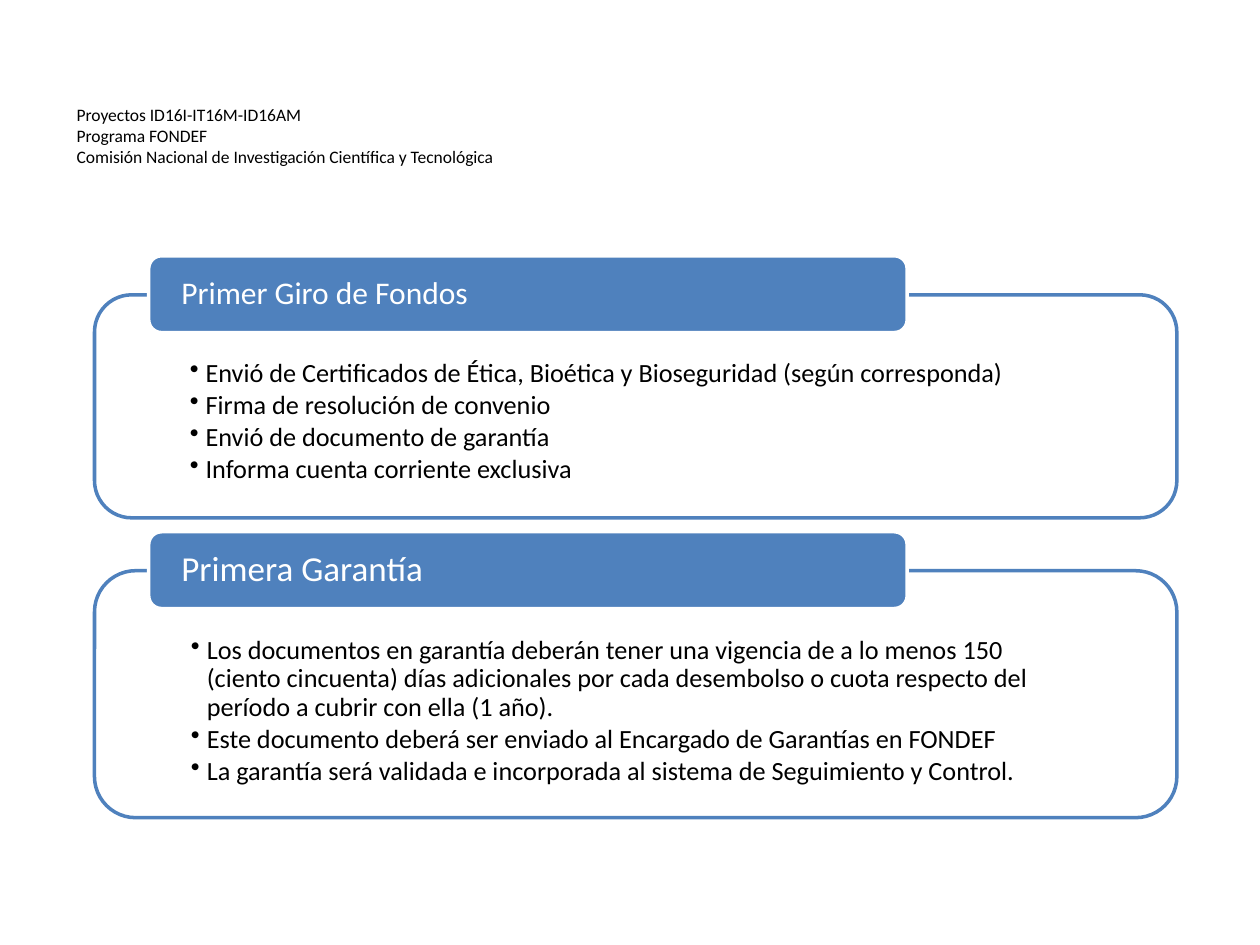
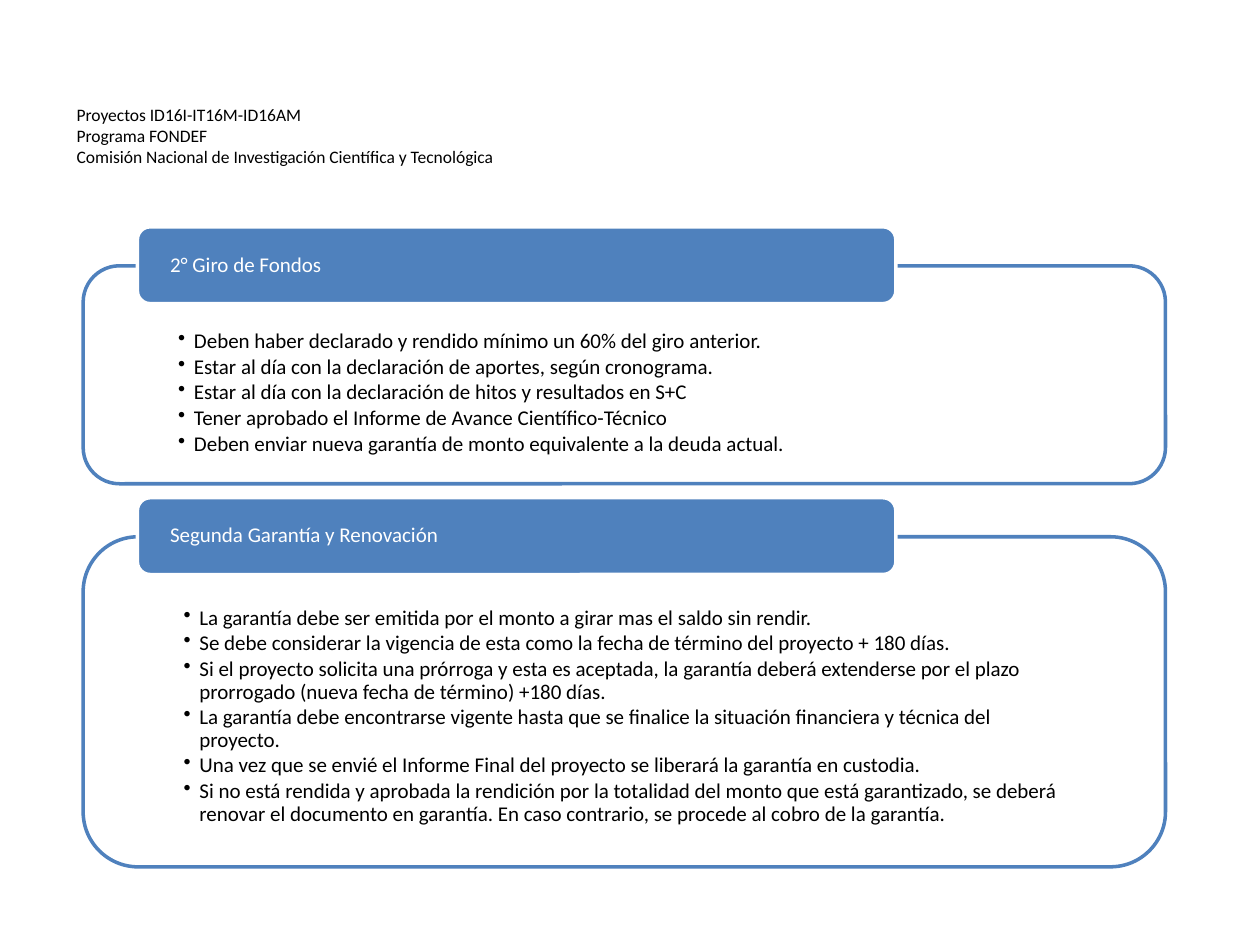
import pptx
import pptx.util
import pptx.dml.color
import pptx.enum.shapes
import pptx.enum.text
import pptx.oxml.ns
import lxml.etree

prs = pptx.Presentation()
prs.slide_width = pptx.util.Inches(10)
prs.slide_height = pptx.util.Inches(7.5)

# Shared look: a grid of 100 columns by 75 rows
U = prs.slide_width / 100
BLUE, WHITE, BLACK = "4F81BD", "FFFFFF", "000000"
FONT = "Calibri"
PANEL_W, TAB_W, TAB_H = 85.9, 60.2, 6.1
TAB_DX, TAB_RISE = 4.3, 3.1
HEADING = [
    "Proyectos ID16I-IT16M-ID16AM",
    "Programa FONDEF",
    "Comisión Nacional de Investigación Científica y Tecnológica",
]


def rgb(color):
    return pptx.dml.color.RGBColor.from_string(color)


def add_box(s, x, y, w, h, fill, line, margins):
    """Rounded rectangle placed on the grid, with margins left, top, right, bottom."""
    sp = s.shapes.add_shape(pptx.enum.shapes.MSO_SHAPE.ROUNDED_RECTANGLE,
                            *[round(v * U) for v in (x, y, w, h)])
    sp.shadow.inherit = False
    sp.fill.solid()
    sp.fill.fore_color.rgb = rgb(fill)
    sp.line.color.rgb = rgb(line)
    sp.line.width = pptx.util.Pt(2)
    tf = sp.text_frame
    tf.word_wrap = True
    tf.margin_left, tf.margin_top, tf.margin_right, tf.margin_bottom = [
        round(m * U) for m in margins]
    return sp


# Each slide: panel left edge, bottom margin, then panels of
# (top, height, tab title, title size, body size, bullets)
slides = [
    (7.5, 1.2, [
        (23.4, 17.7, "Primer Giro de Fondos", 18, 15, [
            "Envió de Certificados de Ética, Bioética y Bioseguridad (según corresponda)",
            "Firma de resolución de convenio",
            "Envió de documento de garantía",
            "Informa cuenta corriente exclusiva",
        ]),
        (45.3, 19.6, "Primera Garantía", 20, 15, [
            "Los documentos en garantía deberán tener una vigencia de a lo menos 150 "
            "(ciento cincuenta) días adicionales por cada desembolso o cuota respecto del "
            "período a cubrir con ella (1 año).",
            "Este documento deberá ser enviado al Encargado de Garantías en FONDEF",
            "La garantía será validada e incorporada al sistema de Seguimiento y Control.",
        ]),
    ]),
    (6.6, 0.9, [
        (21.1, 17.3, "2° Giro de Fondos", 12, 12, [
            "Deben haber declarado y rendido mínimo un 60% del giro anterior.",
            "Estar al día con la declaración de aportes, según cronograma.",
            "Estar al día con la declaración de hitos y resultados en S+C",
            "Tener aprobado el Informe de Avance Científico-Técnico",
            "Deben enviar nueva garantía de monto equivalente a la deuda actual.",
        ]),
        (42.6, 26.2, "Segunda Garantía y Renovación", 12, 12, [
            "La garantía debe ser emitida por el monto a girar mas el saldo sin rendir.",
            "Se debe considerar la vigencia de esta como la fecha de término del proyecto "
            "+ 180 días.",
            "Si el proyecto solicita una prórroga y esta es aceptada, la garantía deberá "
            "extenderse por el plazo prorrogado (nueva fecha de término) +180 días.",
            "La garantía debe encontrarse vigente hasta que se finalice la situación "
            "financiera y técnica del proyecto.",
            "Una vez que se envié el Informe Final del proyecto se liberará la garantía "
            "en custodia.",
            "Si no está rendida y aprobada la rendición por la totalidad del monto que está "
            "garantizado, se deberá renovar el documento en garantía. En caso contrario, "
            "se procede al cobro de la garantía.",
        ]),
    ]),
]

for left, bottom, panels in slides:
    s = prs.slides.add_slide(prs.slide_layouts[6])

    # Heading
    sp = s.shapes.add_textbox(*[round(v * U) for v in (5.1, 5.2, 78.1, 11.1)])
    tf = sp.text_frame
    tf.word_wrap = True
    tf.vertical_anchor = pptx.enum.text.MSO_ANCHOR.MIDDLE
    p = tf.paragraphs[0]
    for i, text in enumerate(HEADING):
        if i:
            p.add_line_break()
        r = p.add_run()
        r.text = text
        r.font.name = FONT
        r.font.size = pptx.util.Pt(10)
        r.font.color.rgb = rgb(BLACK)

    for top, height, title, title_size, body_size, bullets in panels:
        # Outlined panel and the blue tab over its top edge
        panel = add_box(s, left, top, PANEL_W, height, WHITE, BLUE, (6.7, 4.3, 6.7, bottom))
        panel.text_frame.vertical_anchor = pptx.enum.text.MSO_ANCHOR.TOP
        tab = add_box(s, left + TAB_DX, top - TAB_RISE, TAB_W, TAB_H, BLUE, WHITE,
                      (2.3, 0, 2.3, 0))
        tab.text_frame.vertical_anchor = pptx.enum.text.MSO_ANCHOR.MIDDLE

        # Tab title and bulleted body
        for sp, lines, size, color in ((tab, [title], title_size, WHITE),
                                       (panel, bullets, body_size, BLACK)):
            tf = sp.text_frame
            for i, text in enumerate(lines):
                p = tf.paragraphs[0] if i == 0 else tf.add_paragraph()
                p.alignment = pptx.enum.text.PP_ALIGN.LEFT
                p.line_spacing = 0.9
                if sp is panel:
                    p.space_after = pptx.util.Pt(0.14 * size)
                    pPr = p._p.get_or_add_pPr()
                    pPr.set("marL", str(round(1.25 * U)))
                    pPr.set("indent", str(round(-1.25 * U)))
                    bu = lxml.etree.SubElement(pPr, pptx.oxml.ns.qn("a:buChar"))
                    bu.set("char", "•")
                r = p.add_run()
                r.text = text
                r.font.name = FONT
                r.font.size = pptx.util.Pt(size)
                r.font.color.rgb = rgb(color)

prs.save("out.pptx")
